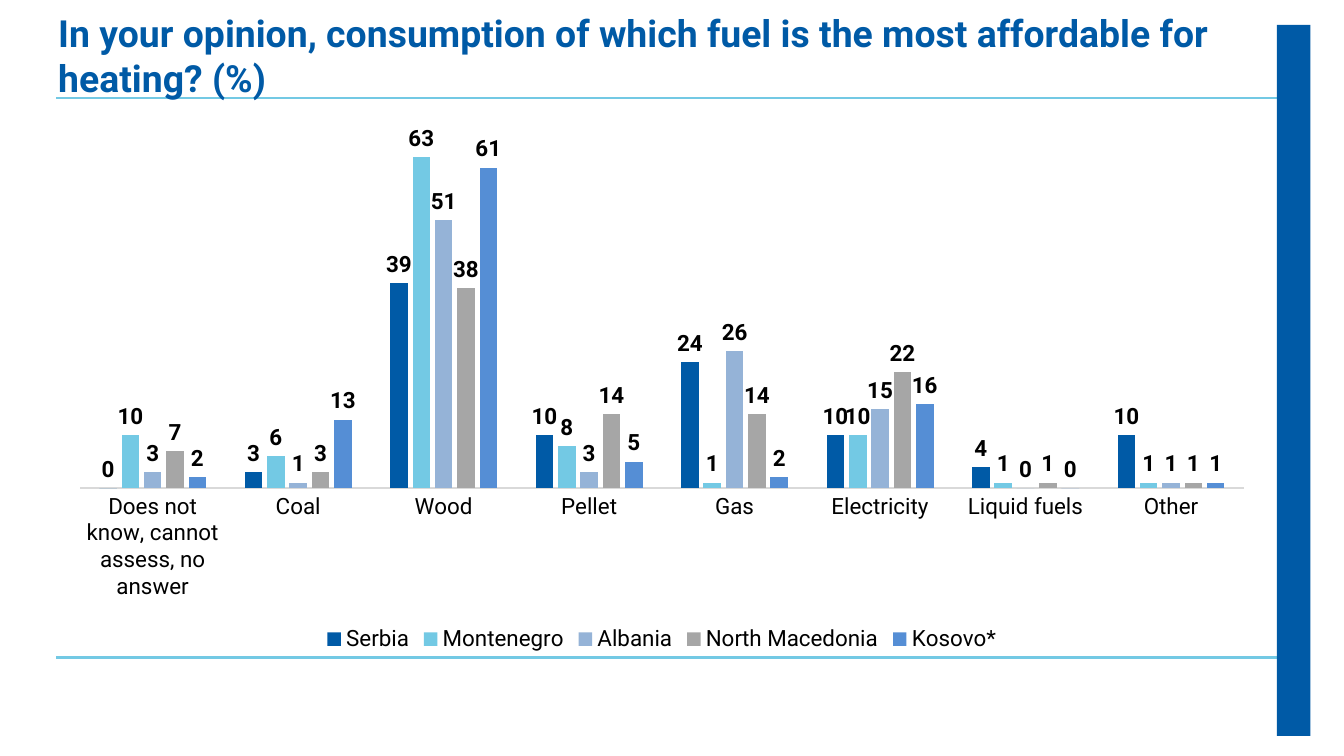
from dataclasses import dataclass

from lxml import etree
from pptx import Presentation
from pptx.chart.data import CategoryChartData
from pptx.dml.color import RGBColor
from pptx.enum.chart import (XL_CHART_TYPE, XL_LABEL_POSITION,
                             XL_LEGEND_POSITION, XL_TICK_MARK)
from pptx.enum.shapes import MSO_CONNECTOR, MSO_SHAPE
from pptx.enum.text import MSO_ANCHOR
from pptx.oxml.ns import qn
from pptx.util import Emu, Pt

COLUMN = XL_CHART_TYPE.COLUMN_CLUSTERED
OUT_END = XL_LABEL_POSITION.OUTSIDE_END
BOTTOM = XL_LEGEND_POSITION.BOTTOM
NO_TICK = XL_TICK_MARK.NONE
STRAIGHT = MSO_CONNECTOR.STRAIGHT
RECT = MSO_SHAPE.RECTANGLE
MIDDLE = MSO_ANCHOR.MIDDLE

SCALE = 4572  # EMU per px, 200 px to the inch


@dataclass(frozen=True)
class Theme:
    font: str = "Roboto"
    navy: str = "005AA6"
    sky: str = "73C9E4"
    mist: str = "95B3D7"
    gray: str = "A6A6A6"
    blue: str = "558ED5"
    axis: str = "D9D9D9"
    ink: str = "000000"
    title: int = 20
    body: int = 12


THEME = Theme()

TITLE = ("In your opinion, consumption of which fuel is the most "
         "affordable for heating? (%)")
FUELS = ["Does not know, cannot assess, no answer", "Coal", "Wood", "Pellet",
         "Gas", "Electricity", "Liquid fuels", "Other"]
SERIES = [
    ("Serbia", THEME.navy, (0, 3, 39, 10, 24, 10, 4, 10)),
    ("Montenegro", THEME.sky, (10, 6, 63, 8, 1, 10, 1, 1)),
    ("Albania", THEME.mist, (3, 1, 51, 3, 26, 15, 0, 1)),
    ("North Macedonia", THEME.gray, (7, 3, 38, 14, 14, 22, 1, 1)),
    ("Kosovo*", THEME.blue, (2, 13, 61, 5, 2, 16, 0, 1)),
]


def px(*sizes):
    return [Emu(size * SCALE) for size in sizes]


def style(font, size, color, bold=False):
    font.name = THEME.font
    font.size = Pt(size)
    font.bold = bold
    font.color.rgb = RGBColor.from_string(color)


def paint(fill, color):
    fill.solid()
    fill.fore_color.rgb = RGBColor.from_string(color)


def add_rule(slide, y):
    rule = slide.shapes.add_connector(STRAIGHT, *px(1942, y, 84, y))
    rule.line.color.rgb = RGBColor.from_string(THEME.sky)
    rule.line.width = Pt(1.5)
    etree.SubElement(rule._element.spPr, qn("a:effectLst"))


def add_bar(slide, *box):
    bar = slide.shapes.add_shape(RECT, *px(*box))
    bar.shadow.inherit = False
    paint(bar.fill, THEME.navy)
    bar.line.fill.background()


def add_title(slide, text, *box):
    frame = slide.shapes.add_textbox(*px(*box)).text_frame
    frame.word_wrap = True
    frame.vertical_anchor = MIDDLE
    frame.text = text
    style(frame.paragraphs[0].runs[0].font, THEME.title, THEME.navy, True)


def add_columns(slide, *box):
    data = CategoryChartData()
    data.categories = FUELS
    for name, _, values in SERIES:
        data.add_series(name, values)
    chart = slide.shapes.add_chart(COLUMN, *px(*box), data).chart
    chart.has_title = False
    style(chart.font, THEME.body, THEME.ink)

    # Axes
    axis = chart.category_axis
    axis.major_tick_mark = axis.minor_tick_mark = NO_TICK
    axis.format.line.color.rgb = RGBColor.from_string(THEME.axis)
    axis.format.line.width = Pt(0.75)
    style(axis.tick_labels.font, THEME.body, THEME.ink)
    scale = chart.value_axis
    scale.visible = False
    scale.has_major_gridlines = False
    scale.minimum_scale, scale.maximum_scale = 0, 70

    # Columns and their values
    plot = chart.plots[0]
    plot.vary_by_categories = False
    plot.gap_width, plot.overlap = 219, -27
    for series, (_, color, _) in zip(plot.series, SERIES):
        paint(series.format.fill, color)
        series.invert_if_negative = False
        labels = series.data_labels
        labels.show_value = True
        labels.position = OUT_END
        style(labels.font, THEME.body, THEME.ink, True)

    # Legend
    chart.has_legend = True
    chart.legend.position = BOTTOM
    chart.legend.include_in_layout = False
    style(chart.legend.font, THEME.body, THEME.ink)


def main():
    deck = Presentation()
    deck.slide_width, deck.slide_height = px(2000, 1125)
    slide = deck.slides.add_slide(deck.slide_layouts[6])

    # Frame
    for y in (146, 979):
        add_rule(slide, y)
    add_bar(slide, 1900, 37, 50, 1058)

    # Content
    add_title(slide, TITLE, 67, 45, 1820, 74)
    add_columns(slide, 83, 163, 1804, 816)
    deck.save("out.pptx")


if __name__ == "__main__":
    main()
